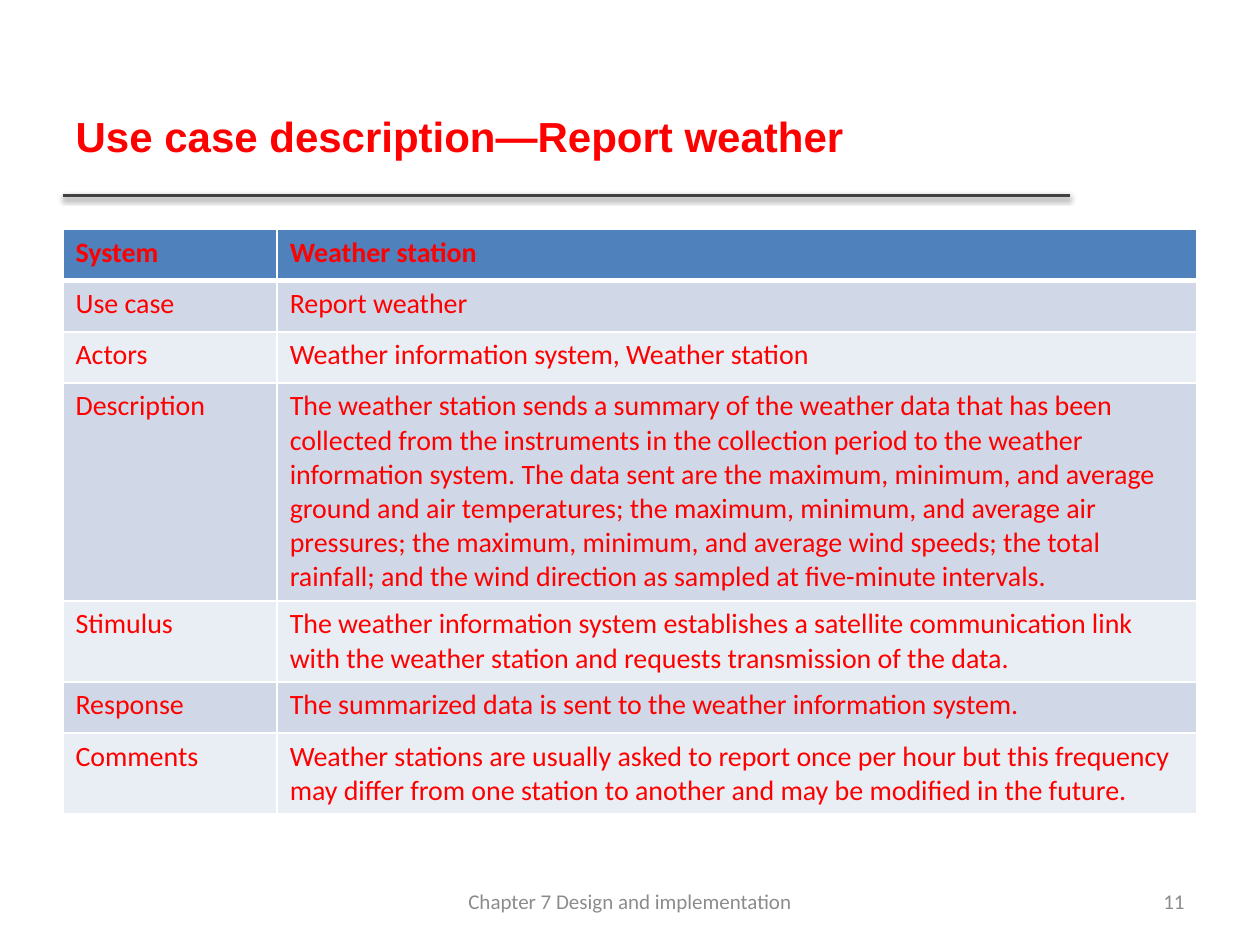
from typing import NamedTuple

from lxml.etree import SubElement
from pptx import Presentation
from pptx.dml.color import RGBColor
from pptx.enum.shapes import MSO_CONNECTOR
from pptx.enum.text import MSO_ANCHOR, PP_ALIGN
from pptx.oxml import parse_xml
from pptx.oxml.ns import nsdecls, qn
from pptx.util import Pt

RED, WHITE, GREY, RULE = "FF0000", "FFFFFF", "8C8C8C", "404040"
HEADER_FILL, BAND_FILLS = "4F81BD", ("E9EDF4", "D0D8E8")
LEFT, TABLE_TOP = 36, 131.2
COLUMN_WIDTHS = (122.4, 525.6)
MINIMUM_ROW, LINE_HEIGHT, CELL_PADDING = 29.2, 19.53, 7.2


class UseCaseRow(NamedTuple):
    label: str
    text: str
    lines: int = 1


class FooterItem(NamedTuple):
    text: str
    left: float
    width: float
    alignment: PP_ALIGN


ROWS = [
    UseCaseRow("System", "Weather station"),
    UseCaseRow("Use case", "Report weather"),
    UseCaseRow("Actors", "Weather information system, Weather station"),
    UseCaseRow(
        "Description",
        "The weather station sends a summary of the weather data that has been "
        "collected from the instruments in the collection period to the weather "
        "information system. The data sent are the maximum, minimum, and average "
        "ground and air temperatures; the maximum, minimum, and average air "
        "pressures; the maximum, minimum, and average wind speeds; the total "
        "rainfall; and the wind direction as sampled at five-minute intervals.",
        6,
    ),
    UseCaseRow(
        "Stimulus",
        "The weather information system establishes a satellite communication link "
        "with the weather station and requests transmission of the data.",
        2,
    ),
    UseCaseRow("Response", "The summarized data is sent to the weather information system."),
    UseCaseRow(
        "Comments",
        "Weather stations are usually asked to report once per hour but this frequency "
        "may differ from one station to another and may be modified in the future.",
        2,
    ),
]

FOOTER = [
    FooterItem("Chapter 7 Design and implementation", 246, 228, PP_ALIGN.CENTER),
    FooterItem("11", 516, 168, PP_ALIGN.RIGHT),
]


def color(value: str) -> RGBColor:
    return RGBColor.from_string(value)


def write(text_frame, text: str, size: float, font_name: str, font_color: str,
          bold: bool = False, alignment: PP_ALIGN = PP_ALIGN.LEFT) -> None:
    text_frame.text = text
    text_frame.word_wrap = True
    paragraph = text_frame.paragraphs[0]
    paragraph.alignment = alignment
    font = paragraph.runs[0].font
    font.size, font.name, font.bold = Pt(size), font_name, bold
    font.color.rgb = color(font_color)


def set_borders(cell, top: float, bottom: float) -> None:
    """Draw white borders; the lines must come before the cell's fill."""
    properties = cell._tc.get_or_add_tcPr()
    widths = {"lnL": 1, "lnR": 1, "lnT": top, "lnB": bottom}
    for index, (side, width) in enumerate(widths.items()):
        line = parse_xml(
            f'<a:{side} {nsdecls("a")} w="{Pt(width)}"><a:solidFill>'
            f'<a:srgbClr val="{WHITE}"/></a:solidFill></a:{side}>')
        properties.insert(index, line)


def add_title(slide, text: str) -> None:
    title = slide.shapes.title
    title.left, title.top, title.width, title.height = Pt(LEFT), Pt(21.6), Pt(574.6), Pt(111.6)
    write(title.text_frame, text, 24, "Arial", RED, bold=True)
    title.text_frame.vertical_anchor = MSO_ANCHOR.MIDDLE


def add_title_rule(slide) -> None:
    rule = slide.shapes.add_connector(
        MSO_CONNECTOR.STRAIGHT, Pt(LEFT), Pt(111.6), Pt(611.3), Pt(111.6))
    rule.line.color.rgb = color(RULE)
    rule.line.width = Pt(2)
    effects = SubElement(rule._element.spPr, qn("a:effectLst"))
    effects.append(parse_xml(
        f'<a:outerShdw {nsdecls("a")} blurRad="{Pt(3.1)}" dist="{Pt(1.6)}" dir="5400000" '
        'rotWithShape="0"><a:srgbClr val="000000"><a:alpha val="38000"/></a:srgbClr>'
        '</a:outerShdw>'))


def add_use_case_table(slide, rows: list[UseCaseRow]) -> None:
    heights = [max(MINIMUM_ROW, row.lines * LINE_HEIGHT + CELL_PADDING) for row in rows]
    table = slide.shapes.add_table(
        len(rows), len(COLUMN_WIDTHS), Pt(LEFT), Pt(TABLE_TOP),
        Pt(sum(COLUMN_WIDTHS)), Pt(sum(heights))).table
    for column, width in zip(table.columns, COLUMN_WIDTHS):
        column.width = Pt(width)
    for index, (row, height) in enumerate(zip(rows, heights)):
        table.rows[index].height = Pt(height)
        is_header = index == 0
        for cell, text in zip(table.rows[index].cells, (row.label, row.text)):
            write(cell.text_frame, text, 16, "Calibri", RED, bold=is_header)
            cell.fill.solid()
            cell.fill.fore_color.rgb = color(HEADER_FILL if is_header else BAND_FILLS[index % 2])
            set_borders(cell, top=3 if index == 1 else 1, bottom=3 if is_header else 1)


def add_footer_item(slide, item: FooterItem) -> None:
    box = slide.shapes.add_textbox(Pt(item.left), Pt(500.5), Pt(item.width), Pt(28.75))
    write(box.text_frame, item.text, 12, "Calibri", GREY, alignment=item.alignment)
    box.text_frame.vertical_anchor = MSO_ANCHOR.MIDDLE


def main() -> None:
    presentation = Presentation()
    presentation.slide_width, presentation.slide_height = Pt(720), Pt(540)
    slide = presentation.slides.add_slide(presentation.slide_layouts[5])

    # Heading
    add_title_rule(slide)
    add_title(slide, "Use case description—Report weather")

    # Use case details
    add_use_case_table(slide, ROWS)

    # Footer
    for item in FOOTER:
        add_footer_item(slide, item)

    presentation.save("out.pptx")


if __name__ == "__main__":
    main()
